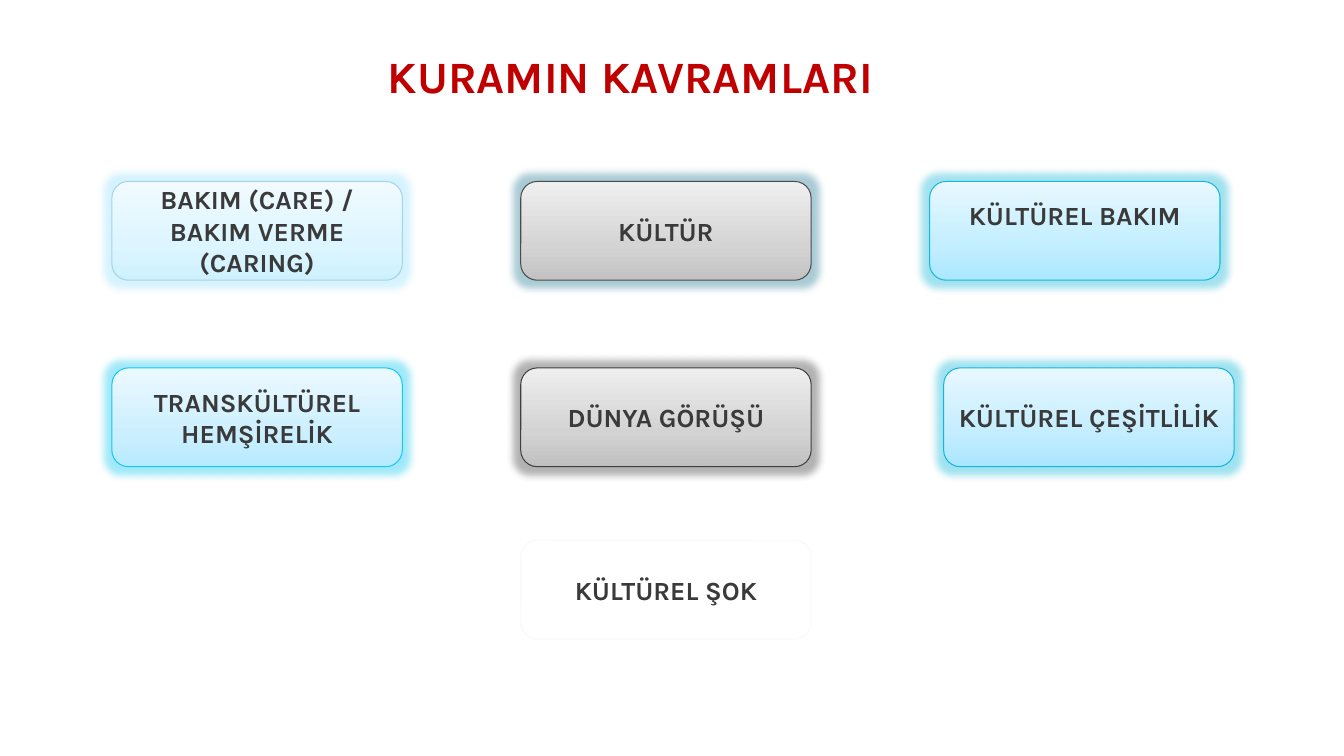
from copy import deepcopy
from lxml import etree
from pptx import Presentation
from pptx.dml.color import RGBColor
from pptx.enum.shapes import MSO_SHAPE
from pptx.enum.text import MSO_ANCHOR, MSO_AUTO_SIZE, PP_ALIGN
from pptx.oxml.ns import qn
from pptx.util import Inches, Pt

ROUNDED = MSO_SHAPE.ROUNDED_RECTANGLE
MIDDLE = MSO_ANCHOR.MIDDLE
CENTER = PP_ALIGN.CENTER
NO_FIT = MSO_AUTO_SIZE.NONE

TITLE_ONLY = 5
COLUMNS = [1.11 + 4.055 * column for column in range(3)]
ROWS = [1.8, 3.65, 5.36]
BOX_WIDTH, BOX_HEIGHT = 2.88, 0.98
LINE_HEIGHT = 0.31
STOP_POSITIONS = [0, 0.35, 1]
GLOW_RADIUS = Inches(0.15)
GLOW_ALPHA = "40000"

COLORS = {"title": "C00000", "text": "3A3A3A", "white": "FFFFFF"}

STYLES = {
    "pale": {"stops": ["CFF1FF", "DCF5FF", "F1FBFF"], "line": "A6D4E4", "glow": "96E1FF"},
    "bright": {"stops": ["B6EAFF", "CCEFFF", "ECF9FF"], "line": "14CAF1", "glow": "14CAF1"},
    "cyan": {"stops": ["AAE8FF", "C3EEFF", "E8F8FF"], "line": "16B7D7", "glow": "16B7D7"},
    "sky": {"stops": ["ABE6FF", "C4EDFF", "E9F8FF"], "line": "11B7DA", "glow": "11B7DA"},
    "silver": {"stops": ["C2C2C2", "D4D4D4", "EFEFEF"], "line": "4B4B4B", "glow": "297E96"},
    "gray": {"stops": ["C0C0C0", "D3D3D3", "EEEEEE"], "line": "3F3F3F", "glow": "3F3F3F"},
    "plain": {"stops": [], "line": "F9F9F9", "glow": None},
}

CONCEPTS = [
    ("BAKIM (CARE) / BAKIM VERME (CARING)", "pale", 0, 0, {}),
    ("TRANSKÜLTÜREL HEMŞİRELİK", "bright", 0, 1, {}),
    ("KÜLTÜREL BAKIM", "cyan", 2, 0, {"raised": LINE_HEIGHT}),
    ("KÜLTÜR", "silver", 1, 0, {}),
    ("KÜLTÜREL ÇEŞİTLİLİK", "sky", 2, 1, {"shift": 0.14}),
    ("DÜNYA GÖRÜŞÜ", "gray", 1, 1, {}),
    ("KÜLTÜREL ŞOK", "plain", 1, 2, {}),
]


def write_text(frame, text, size, color, anchor=MIDDLE, bottom=0.05):
    frame.word_wrap = True
    frame.auto_size = NO_FIT
    frame.vertical_anchor = anchor
    frame.margin_left = frame.margin_right = Inches(0.1)
    frame.margin_top, frame.margin_bottom = Inches(0.05), Inches(bottom)
    para = frame.paragraphs[0]
    para.alignment = CENTER
    span = para.add_run()
    span.text = text
    span.font.name = "Karla"
    span.font.size = Pt(size)
    span.font.bold = True
    span.font.color.rgb = RGBColor.from_string(color)


def fill_gradient(box, colors):
    box.fill.gradient()
    box.fill.gradient_angle = 90
    stop_list = box._element.spPr.find(".//" + qn("a:gsLst"))
    stop_list.insert(1, deepcopy(stop_list[0]))
    for stop, color, position in zip(box.fill.gradient_stops, colors, STOP_POSITIONS):
        stop.color.rgb = RGBColor.from_string(color)
        stop.position = position


def add_glow(box, color):
    effects = box._element.spPr.find(qn("a:effectLst"))
    glow = etree.SubElement(effects, qn("a:glow"), rad=str(GLOW_RADIUS))
    tint = etree.SubElement(glow, qn("a:srgbClr"), val=color)
    etree.SubElement(tint, qn("a:alpha"), val=GLOW_ALPHA)


def add_concept(page, text, style_name, column, row, shift=0, raised=0):
    style = STYLES[style_name]
    box = page.shapes.add_shape(
        ROUNDED, Inches(COLUMNS[column] + shift), Inches(ROWS[row]),
        Inches(BOX_WIDTH), Inches(BOX_HEIGHT))
    box.shadow.inherit = False
    if style["stops"]:
        fill_gradient(box, style["stops"])
    else:
        box.fill.solid()
        box.fill.fore_color.rgb = RGBColor.from_string(COLORS["white"])
    box.line.color.rgb = RGBColor.from_string(style["line"])
    box.line.width = Pt(0.75)
    if style["glow"]:
        add_glow(box, style["glow"])
    write_text(box.text_frame, text, 18.7, COLORS["text"], bottom=0.05 + raised)


def place_title(page, text):
    title = page.shapes.title
    title.left, title.top = Inches(2.76), Inches(0.43)
    title.width, title.height = Inches(6.99), Inches(0.64)
    write_text(title.text_frame, text, 32, COLORS["title"])


def main():
    deck = Presentation()
    deck.slide_width, deck.slide_height = Inches(13.33), Inches(7.5)
    page = deck.slides.add_slide(deck.slide_layouts[TITLE_ONLY])
    place_title(page, "KURAMIN KAVRAMLARI")
    for text, style_name, column, row, options in CONCEPTS:
        add_concept(page, text, style_name, column, row, **options)
    deck.save("out.pptx")


if __name__ == "__main__":
    main()
